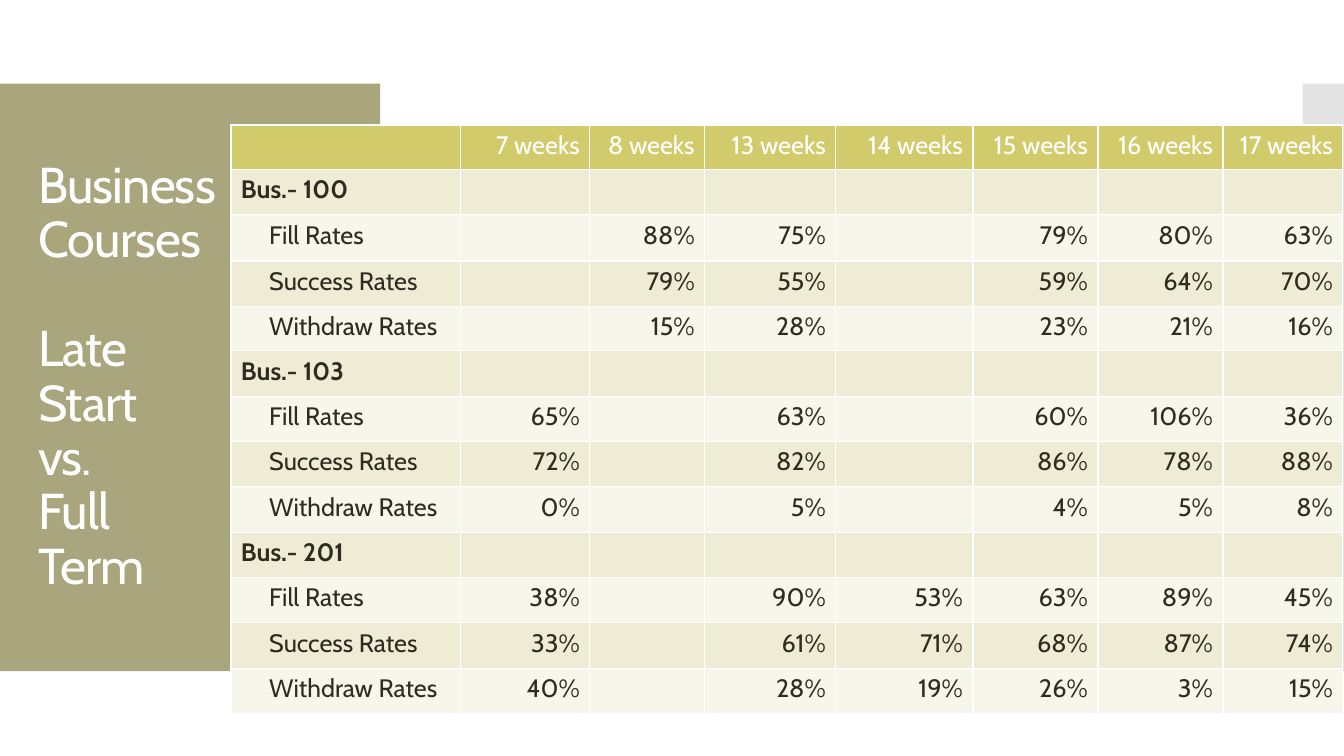
from lxml.etree import SubElement as Sub
from pptx import Presentation
from pptx.dml.color import RGBColor
from pptx.enum.shapes import MSO_SHAPE as Shape
from pptx.enum.text import MSO_ANCHOR as Anchor, PP_ALIGN as Align
from pptx.oxml.ns import qn
from pptx.util import Inches, Pt

WHITE, OLIVE, GRAY = "FFFFFF", "A9A57C", "C8C8C8"
INK, HEAD, DARK, PALE = "2F2B20", "D2CB6C", "EEECD4", "F7F6EB"
WIDTHS = [2.28, 1.28, 1.14, 1.3, 1.36, 1.24, 1.24, 1.19]
HEIGHTS = [0.44, 0.45, 0.46, 0.45, 0.44] + [0.45] * 8
WEEKS = [7, 8, 13, 14, 15, 16, 17]
KINDS = ["Fill Rates", "Success Rates", "Withdraw Rates"]
RATES = {
    "Bus.- 100": [
        [None, 88, 75, None, 79, 80, 63],
        [None, 79, 55, None, 59, 64, 70],
        [None, 15, 28, None, 23, 21, 16],
    ],
    "Bus.- 103": [
        [65, None, 63, None, 60, 106, 36],
        [72, None, 82, None, 86, 78, 88],
        [0, None, 5, None, 4, 5, 8],
    ],
    "Bus.- 201": [
        [38, None, 90, 53, 63, 89, 45],
        [33, None, 61, 71, 68, 87, 74],
        [40, None, 28, 19, 26, 3, 15],
    ],
}


def color(code):
    """Turn a hex string into a colour."""
    return RGBColor.from_string(code)


def add_run(para, text, size, code, bold=False):
    """Add one styled run to a paragraph."""
    run = para.add_run()
    run.text = text
    font = run.font
    font.name, font.size, font.bold = "Cabin", Pt(size), bold
    font.color.rgb = color(code)
    return run


def add_panel(slide, left, width, code, alpha=None):
    """Draw a plain side panel, see-through if alpha is given."""
    panel = slide.shapes.add_shape(
        Shape.RECTANGLE, Inches(left), Inches(0.83), Inches(width), Inches(5.83))
    panel.shadow.inherit = False
    panel.line.fill.background()
    panel.fill.solid()
    panel.fill.fore_color.rgb = color(code)
    if alpha:
        tone = panel._element.spPr.find(qn("a:solidFill"))[0]
        Sub(tone, qn("a:alpha"), val=str(alpha * 1000))


def add_title(slide, groups):
    """Write the title, one paragraph per group of lines."""
    box = slide.shapes.add_textbox(
        Inches(0.28), Inches(1.23), Inches(3.22), Inches(5.03))
    frame = box.text_frame
    frame.word_wrap = True
    frame.vertical_anchor = Anchor.MIDDLE
    for i, lines in enumerate(groups):
        para = frame.add_paragraph() if i else frame.paragraphs[0]
        para.line_spacing = 0.9
        para.space_before = Pt(39 if i else 0)
        for j, line in enumerate(lines):
            if j:
                para.add_line_break()
            run = add_run(para, line, 36, WHITE)
            run.font._element.set("spc", "-60")


def set_edges(cell):
    """Give a cell thin white borders."""
    props = cell._tc.get_or_add_tcPr()
    for i, side in enumerate(["lnL", "lnR", "lnT", "lnB"]):
        line = props.makeelement(qn("a:" + side), {"w": str(Pt(1))})
        fill = Sub(line, qn("a:solidFill"))
        Sub(fill, qn("a:srgbClr"), val=WHITE)
        props.insert(i, line)


def fill_cell(cell, text, fill, code, bold, right):
    """Fill one table cell and write its text."""
    cell.fill.solid()
    cell.fill.fore_color.rgb = color(fill)
    set_edges(cell)
    para = cell.text_frame.paragraphs[0]
    para.font.size, para.font.name = Pt(18), "Cabin"
    if right:
        para.alignment = Align.RIGHT
    if text:
        add_run(para, text, 18, code, bold)
    if text in KINDS:
        cell.margin_left = Inches(0.38)


def list_rows():
    """List the table text row by row."""
    rows = [[""] + [f"{week} weeks" for week in WEEKS]]
    for course, rates in RATES.items():
        rows.append([course] + [""] * len(WEEKS))
        for kind, vals in zip(KINDS, rates):
            rows.append([kind] + ["" if v is None else f"{v}%" for v in vals])
    return rows


def add_rates(slide):
    """Build the table of rates by course and term length."""
    rows = list_rows()
    table = slide.shapes.add_table(
        len(rows), len(WIDTHS), Inches(2.29), Inches(1.24),
        Inches(sum(WIDTHS)), Inches(sum(HEIGHTS))).table
    for col, width in zip(table.columns, WIDTHS):
        col.width = Inches(width)
    for row, height in zip(table.rows, HEIGHTS):
        row.height = Inches(height)
    for r, row in enumerate(rows):
        fill = (DARK if r % 2 else PALE) if r else HEAD
        code = INK if r else WHITE
        for c, text in enumerate(row):
            fill_cell(table.cell(r, c), text, fill, code, text in RATES, c > 0)


def main():
    """Build and save the slide."""
    deck = Presentation()
    deck.slide_width, deck.slide_height = Inches(13.33), Inches(7.5)
    slide = deck.slides.add_slide(deck.slide_layouts[6])
    add_panel(slide, 0, 3.77, OLIVE)
    add_panel(slide, 12.92, 0.41, GRAY, 50)
    add_title(slide, [["Business Courses"],
                      ["Late", "Start", "vs.", "Full", "Term"]])
    add_rates(slide)
    deck.save("out.pptx")


if __name__ == "__main__":
    main()
